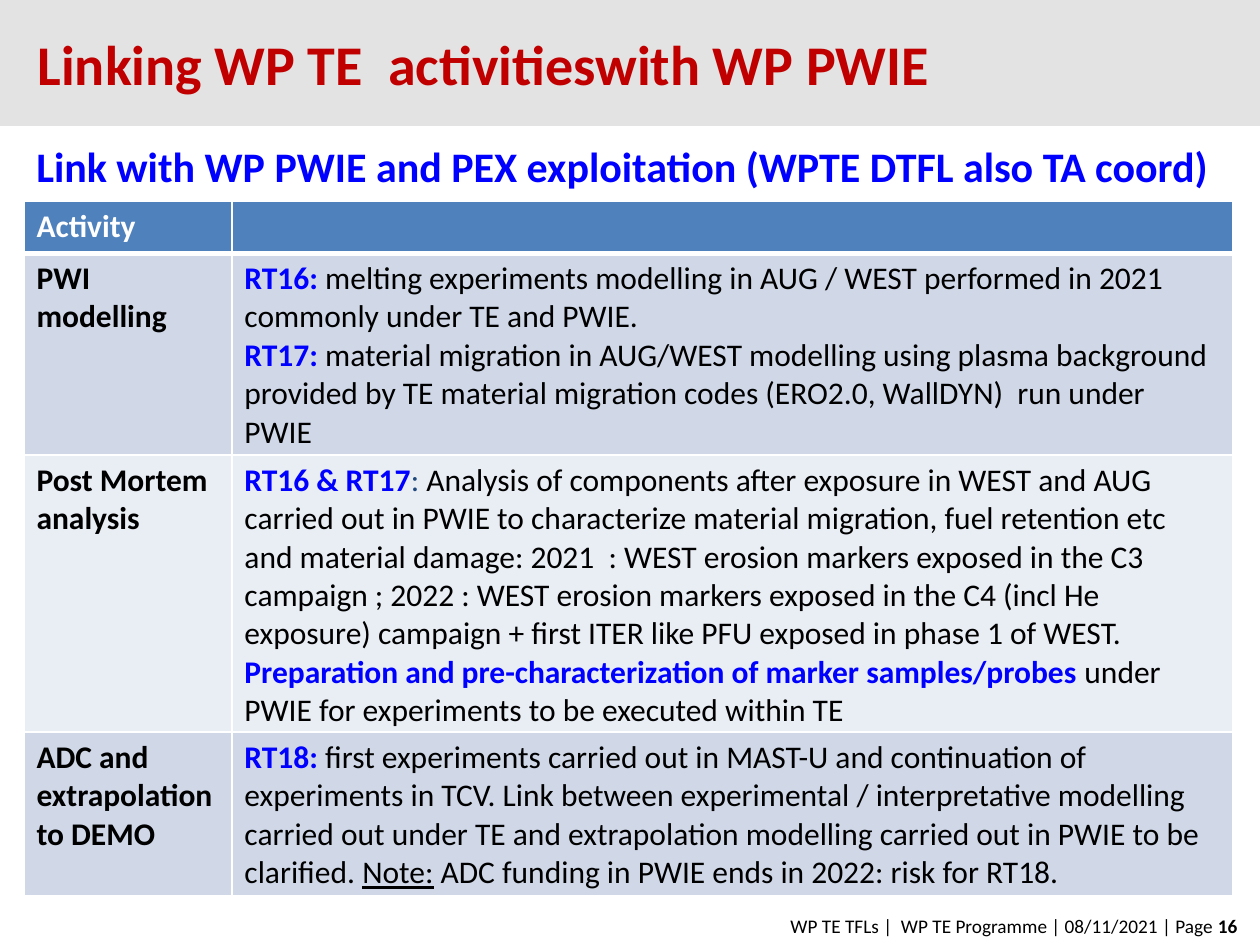
from dataclasses import dataclass

from lxml import etree
from pptx import Presentation
from pptx import util as u
from pptx.dml.color import RGBColor
from pptx.enum import shapes, text
from pptx.oxml.ns import qn


@dataclass(frozen=True)
class Theme:
    font: str = "Calibri"
    black: str = "000000"
    white: str = "FFFFFF"
    title: str = "C00000"
    accent: str = "0000FF"
    navy: str = "1F497D"
    banner: str = "E3E3E3"
    header: str = "4F81BD"
    bands: tuple[str, str] = ("D0D8E8", "E9EDF4")
    title_size: int = 32
    subtitle_size: int = 24
    body_size: int = 18
    footer_size: int = 11


THEME = Theme()


@dataclass(frozen=True)
class Run:
    words: str
    color: str = THEME.black
    bold: bool = False
    underline: bool = False


@dataclass(frozen=True)
class Activity:
    name: str
    height: float
    details: list[list[Run]]


def key(words: str) -> Run:
    return Run(words, THEME.accent, bold=True)


ACTIVITIES = [
    Activity("PWI modelling", 1.6, [
        [key("RT16: "),
         Run("melting experiments modelling in AUG / WEST performed in 2021 "
             "commonly under TE and PWIE.")],
        [key("RT17: "),
         Run("material migration in AUG/WEST modelling using plasma background "
             "provided by TE material migration codes (ERO2.0, WallDYN)  run under PWIE")],
    ]),
    Activity("Post Mortem analysis", 2.2, [
        [key("RT16 & RT17"), Run(": ", THEME.navy),
         Run("Analysis of components after exposure in WEST and AUG carried out in PWIE "
             "to characterize material migration, fuel retention etc and material damage: "
             "2021  : WEST erosion markers exposed in the C3 campaign ; "
             "2022 : WEST erosion markers exposed in the C4 (incl He exposure) campaign "
             "+ first ITER like PFU exposed in phase 1 of WEST.")],
        [key("Preparation and pre-characterization of marker samples/probes "),
         Run("under PWIE for experiments to be executed within TE")],
    ]),
    Activity("ADC and extrapolation to DEMO", 1.3, [
        [key("RT18: "),
         Run("first experiments carried out in MAST-U and continuation of experiments in TCV. "
             "Link between experimental / interpretative modelling carried out under TE and "
             "extrapolation modelling carried out in PWIE to be clarified. "),
         Run("Note:", underline=True),
         Run(" ADC funding in PWIE ends in 2022: risk for RT18.")],
    ]),
]
HEADER_HEIGHT = 0.41
COLUMN_WIDTHS = (1.65, 7.94)


def write(frame, paragraphs: list[list[Run]], size: int, align=text.PP_ALIGN.LEFT) -> None:
    for index, runs in enumerate(paragraphs):
        paragraph = frame.add_paragraph() if index else frame.paragraphs[0]
        paragraph.alignment = align
        for item in runs:
            run = paragraph.add_run()
            run.text = item.words
            run.font.name = THEME.font
            run.font.size = u.Pt(size)
            run.font.bold = item.bold
            run.font.underline = item.underline
            run.font.color.rgb = RGBColor.from_string(item.color)


def add_text(slide, box: tuple[float, float, float, float], runs: list[Run], size: int,
             align=text.PP_ALIGN.LEFT, anchor=text.MSO_ANCHOR.TOP) -> None:
    frame = slide.shapes.add_textbox(*map(u.Inches, box)).text_frame
    frame.word_wrap = True
    frame.vertical_anchor = anchor
    write(frame, [runs], size, align)


def style_cell(cell, fill: str, top: float, bottom: float) -> None:
    properties = cell._tc.get_or_add_tcPr()
    for side, width in (("L", 1), ("R", 1), ("T", top), ("B", bottom)):
        border = etree.SubElement(properties, qn(f"a:ln{side}"), w=str(u.Pt(width)))
        solid = etree.SubElement(border, qn("a:solidFill"))
        etree.SubElement(solid, qn("a:srgbClr"), val=THEME.white)
    cell.fill.solid()
    cell.fill.fore_color.rgb = RGBColor.from_string(fill)


def add_activities(slide) -> None:
    heights = [HEADER_HEIGHT] + [activity.height for activity in ACTIVITIES]
    table = slide.shapes.add_table(
        len(heights), len(COLUMN_WIDTHS), u.Inches(0.19), u.Inches(1.6),
        u.Inches(sum(COLUMN_WIDTHS)), u.Inches(sum(heights))).table
    for column, width in zip(table.columns, COLUMN_WIDTHS):
        column.width = u.Inches(width)
    for index, height in enumerate(heights):
        table.rows[index].height = u.Inches(height)
        fill = THEME.bands[(index - 1) % 2] if index else THEME.header
        for cell in table.rows[index].cells:
            style_cell(cell, fill, top=3 if index == 1 else 1, bottom=1 if index else 3)

    write(table.cell(0, 0).text_frame, [[Run("Activity", THEME.white, bold=True)]],
          THEME.body_size)
    for index, activity in enumerate(ACTIVITIES, 1):
        write(table.cell(index, 0).text_frame, [[Run(activity.name, bold=True)]],
              THEME.body_size)
        write(table.cell(index, 1).text_frame, activity.details, THEME.body_size)


def main() -> None:
    deck = Presentation()
    deck.slide_width, deck.slide_height = u.Inches(10), u.Inches(7.5)
    slide = deck.slides.add_slide(deck.slide_layouts[6])

    banner = slide.shapes.add_shape(
        shapes.MSO_SHAPE.RECTANGLE, 0, 0, deck.slide_width, u.Inches(1))
    banner.shadow.inherit = False
    banner.fill.solid()
    banner.fill.fore_color.rgb = RGBColor.from_string(THEME.banner)
    banner.line.fill.background()

    add_text(slide, (0.91, 7.21, 9.01, 0.29),
             [Run("WP TE TFLs |  WP TE Programme | 08/11/2021 | Page "), Run("16", bold=True)],
             THEME.footer_size, align=text.PP_ALIGN.RIGHT)
    add_text(slide, (0.2, 0, 8.58, 1),
             [Run("Linking WP TE  activitieswith WP PWIE", THEME.title, bold=True)],
             THEME.title_size, anchor=text.MSO_ANCHOR.MIDDLE)
    add_text(slide, (0.19, 1.07, 9.81, 0.5),
             [key("Link with WP PWIE and PEX exploitation (WPTE DTFL also TA coord)")],
             THEME.subtitle_size)
    add_activities(slide)
    deck.save("out.pptx")


if __name__ == "__main__":
    main()
